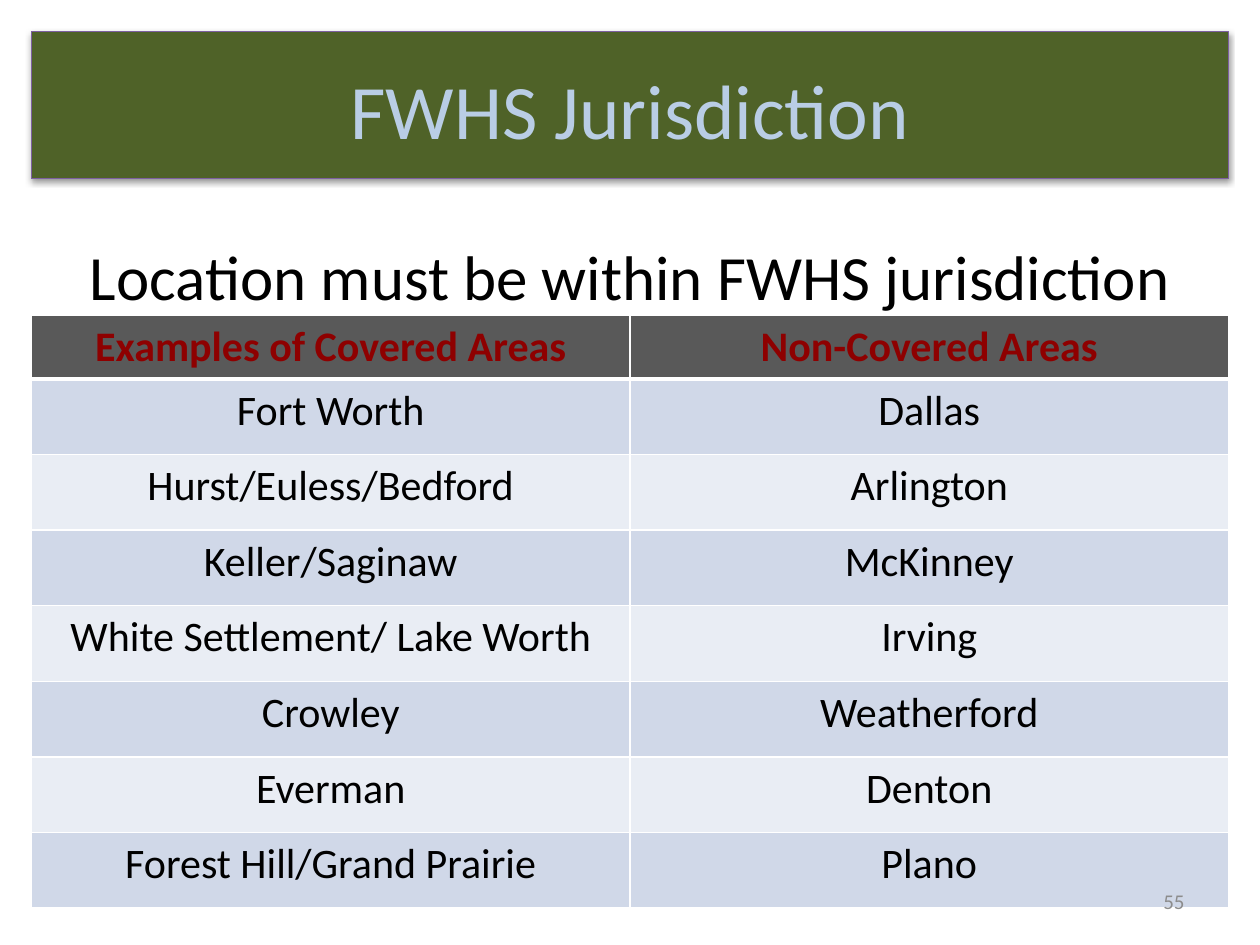
from typing import NamedTuple

import lxml.etree
import pptx
import pptx.dml.color
import pptx.enum.shapes
import pptx.enum.text
import pptx.oxml.ns
import pptx.util

Inches = pptx.util.Inches
Pt = pptx.util.Pt
Align = pptx.enum.text.PP_ALIGN
Anchor = pptx.enum.text.MSO_ANCHOR
qn = pptx.oxml.ns.qn

FONT = "Calibri"
COLORS = {
    "banner": "4F6228",
    "banner_line": "7D60A0",
    "title": "B9CDE5",
    "text": "000000",
    "header": "595959",
    "header_text": "8E0000",
    "band_dark": "D0D8E8",
    "band_light": "E9EDF4",
    "border": "FFFFFF",
    "page_number": "8C8C8C",
}
MARGIN = 0.25
CONTENT_WIDTH = 9.5
HEADER_HEIGHT = 0.33
ROW_HEIGHT = 0.6


class TextStyle(NamedTuple):
    size: int
    color: str
    align: Align = Align.CENTER
    bold: bool = False


class TextLine(NamedTuple):
    text: str
    left: float
    top: float
    width: float
    height: float
    style: TextStyle


class Area(NamedTuple):
    covered: str
    not_covered: str


HEADER = Area("Examples of Covered Areas", "Non-Covered Areas")
AREAS = [
    Area("Fort Worth", "Dallas"),
    Area("Hurst/Euless/Bedford", "Arlington"),
    Area("Keller/Saginaw", "McKinney"),
    Area("White Settlement/ Lake Worth", "Irving"),
    Area("Crowley", "Weatherford"),
    Area("Everman", "Denton"),
    Area("Forest Hill/Grand Prairie", "Plano"),
]
TEXT_LINES = [
    TextLine("Location must be within FWHS jurisdiction",
             MARGIN, 1.83, CONTENT_WIDTH, 0.71, TextStyle(36, "text")),
    TextLine("55", 7.17, 6.95, 2.33, 0.4,
             TextStyle(12, "page_number", Align.RIGHT)),
]


def rgb(name: str) -> pptx.dml.color.RGBColor:
    return pptx.dml.color.RGBColor.from_string(COLORS[name])


def write_text(text_frame, text: str, style: TextStyle) -> None:
    paragraph = text_frame.paragraphs[0]
    paragraph.alignment = style.align
    run = paragraph.add_run()
    run.text = text
    run.font.name = FONT
    run.font.size = Pt(style.size)
    run.font.bold = style.bold
    run.font.color.rgb = rgb(style.color)


def add_border(cell, side: str, width: float) -> None:
    properties = cell._tc.get_or_add_tcPr()
    line = lxml.etree.SubElement(properties, qn(f"a:ln{side}"), w=str(Pt(width)))
    fill = lxml.etree.SubElement(line, qn("a:solidFill"))
    lxml.etree.SubElement(fill, qn("a:srgbClr"), val=COLORS["border"])


def add_areas_table(slide) -> None:
    rows = [HEADER, *AREAS]
    height = HEADER_HEIGHT + ROW_HEIGHT * len(AREAS)
    table = slide.shapes.add_table(
        len(rows), len(HEADER), Inches(MARGIN), Inches(2.5),
        Inches(CONTENT_WIDTH), Inches(height)).table
    for row_index, row in enumerate(rows):
        is_header = row_index == 0
        table.rows[row_index].height = Inches(HEADER_HEIGHT if is_header else ROW_HEIGHT)
        if is_header:
            fill = "header"
        else:
            fill = "band_dark" if row_index % 2 else "band_light"
        style = TextStyle(24, "header_text" if is_header else "text", bold=is_header)
        for column_index, text in enumerate(row):
            cell = table.cell(row_index, column_index)
            write_text(cell.text_frame, text, style)
            # Borders come before the fill in the cell properties
            widths = {"L": 1, "R": 1, "T": 3 if row_index == 1 else 1,
                      "B": 3 if is_header else 1}
            for side, width in widths.items():
                add_border(cell, side, width)
            cell.fill.solid()
            cell.fill.fore_color.rgb = rgb(fill)


def add_shadow(shape) -> None:
    shape.shadow.inherit = False
    effects = shape._element.spPr.find(qn("a:effectLst"))
    shadow = lxml.etree.SubElement(
        effects, qn("a:outerShdw"), blurRad=str(Pt(3.1)), dist=str(Pt(1.6)),
        dir=str(90 * 60000), rotWithShape="0")
    color = lxml.etree.SubElement(shadow, qn("a:srgbClr"), val="000000")
    lxml.etree.SubElement(color, qn("a:alpha"), val="38000")


def add_banner(slide, title: str) -> None:
    banner = slide.shapes.add_shape(
        pptx.enum.shapes.MSO_SHAPE.RECTANGLE, Inches(MARGIN), Inches(MARGIN),
        Inches(CONTENT_WIDTH), Inches(1.17))
    banner.fill.solid()
    banner.fill.fore_color.rgb = rgb("banner")
    banner.line.color.rgb = rgb("banner_line")
    banner.line.width = Pt(0.75)
    add_shadow(banner)
    frame = banner.text_frame
    frame.margin_left = frame.margin_right = frame.margin_bottom = 0
    frame.margin_top = Inches(0.05)
    frame.vertical_anchor = Anchor.MIDDLE
    write_text(frame, title, TextStyle(44, "title"))


def add_text_line(slide, line: TextLine) -> None:
    box = slide.shapes.add_textbox(
        Inches(line.left), Inches(line.top), Inches(line.width), Inches(line.height))
    box.text_frame.word_wrap = True
    box.text_frame.vertical_anchor = Anchor.MIDDLE
    write_text(box.text_frame, line.text, line.style)


def main() -> None:
    presentation = pptx.Presentation()
    presentation.slide_width = Inches(10)
    presentation.slide_height = Inches(7.5)
    slide = presentation.slides.add_slide(presentation.slide_layouts[6])

    # Table of areas
    add_areas_table(slide)
    # Title banner
    add_banner(slide, "FWHS Jurisdiction")
    # Subtitle and page number
    for line in TEXT_LINES:
        add_text_line(slide, line)

    presentation.save("out.pptx")


if __name__ == "__main__":
    main()
